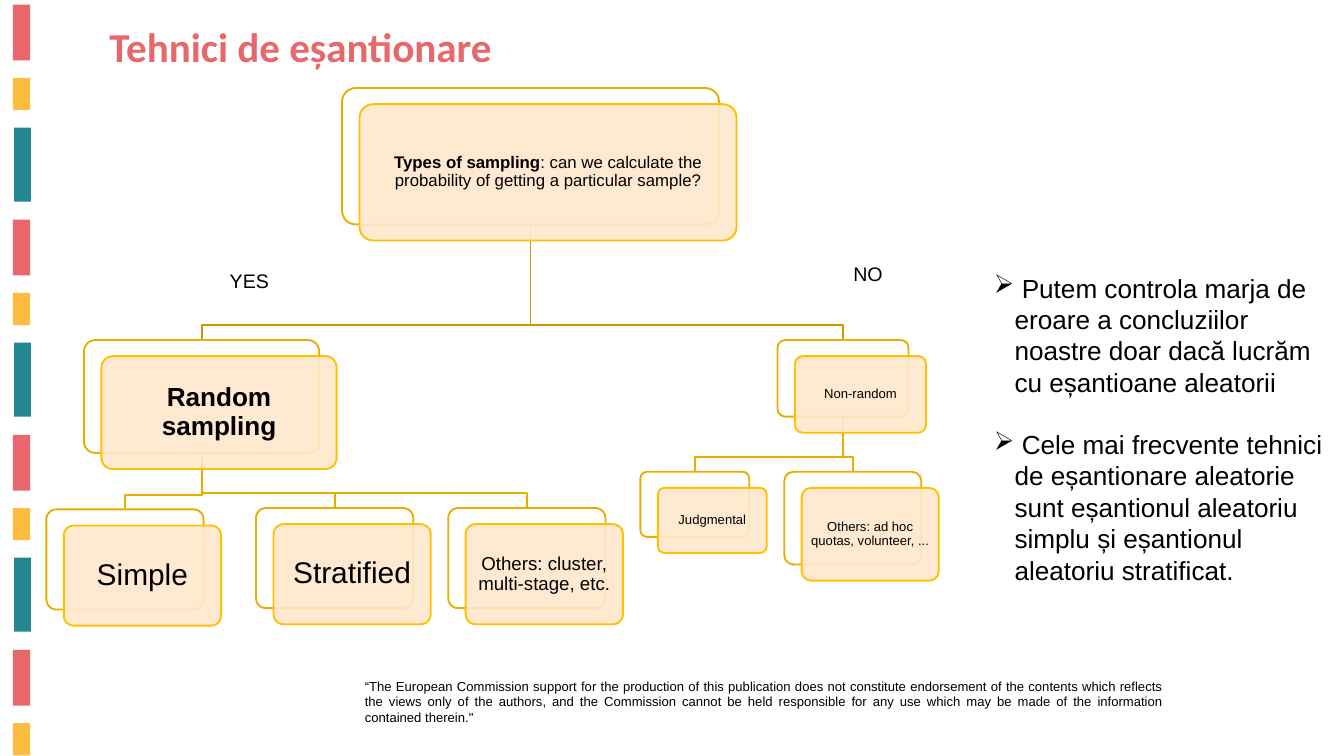
"""Build a slide with a decision tree of sampling techniques."""
import lxml.etree
import pptx
import pptx.dml.color
import pptx.enum.shapes
import pptx.enum.text
import pptx.oxml.ns
import pptx.util

Inches = pptx.util.Inches
Pt = pptx.util.Pt
ALIGN = pptx.enum.text.PP_ALIGN
ANCHOR = pptx.enum.text.MSO_ANCHOR
SHAPE = pptx.enum.shapes.MSO_SHAPE

COLORS = {
    "coral": "E8676A",
    "yellow": "FDBD40",
    "teal": "238791",
    "title": "E7686A",
    "text": "000000",
    "back_fill": "FFFFFF",
    "back_line": "E7AE00",
    "front_fill": "FFE8CC",
    "front_line": "FFC000",
    "trunk": "CC9A00",
}

STRIPE_PERIOD = 3.2
STRIPES = [
    ("coral", 0.19, 0.07, 0.26, 0.83),
    ("yellow", 0.19, 1.16, 0.26, 0.48),
    ("teal", 0.21, 1.9, 0.25, 1.1),
]

CARD_OFFSET = (0.26, 0.24)
ELBOW_GAP = 0.22
NODES = {
    "types": ((5.09, 1.31, 5.61, 2.03), 18, 0.13, [
        ("Types of sampling", True),
        (": can we calculate the probability of getting a particular sample?", False)]),
    "random": ((1.25, 5.06, 3.5, 1.68), 28, 0.17, [("Random sampling", True)]),
    "simple": ((0.69, 7.58, 2.34, 1.49), 32, 0.18, [("Simple", False)]),
    "stratified": ((3.81, 7.56, 2.34, 1.49), 32, 0.18, [("Stratified", False)]),
    "other random": ((6.67, 7.56, 2.34, 1.49), 20, 0.13,
                     [("Others: cluster, multi-stage, etc.", False)]),
    "non-random": ((11.57, 5.06, 1.95, 1.14), 14, 0.1, [("Non-random", False)]),
    "judgmental": ((9.53, 7.02, 1.62, 0.97), 14, 0.1, [("Judgmental", False)]),
    "other non-random": ((11.67, 7.02, 2.04, 1.38), 14, 0.1,
                         [("Others: ad hoc quotas, volunteer, ...", False)]),
}
BRANCHES = [
    ("non-random", "back_line", ["other non-random", "judgmental"]),
    ("random", "back_line", ["other random", "stratified", "simple"]),
    ("types", "trunk", ["non-random", "random"]),
]

FOOTER = (
    "“The European Commission support for the production of this publication does not "
    "constitute endorsement of the contents which reflects the views only of the authors, "
    "and the Commission cannot be held responsible for any use which may be made of the "
    "information contained therein.\""
)
CONCLUSIONS = [
    " Putem controla marja de eroare a concluziilor noastre doar dacă lucrăm "
    "cu eșantioane aleatorii",
    " Cele mai frecvente tehnici de eșantionare aleatorie sunt eșantionul aleatoriu "
    "simplu și eșantionul aleatoriu stratificat.",
]


def rgb(name):
    """Return the named colour."""
    return pptx.dml.color.RGBColor.from_string(COLORS[name])


def apply_format(target, values):
    """Set each attribute of the target from a dict."""
    for name, value in values.items():
        setattr(target, name, value)


def add_run(paragraph, text, size, font="Arial", bold=False, color="text"):
    """Append a formatted run to a paragraph."""
    run = paragraph.add_run()
    run.text = text
    apply_format(run.font, {"size": Pt(size), "name": font, "bold": bold})
    run.font.color.rgb = rgb(color)


def add_box(slide, bounds, shape_type, fill, line=None):
    """Add a filled preset shape without a shadow."""
    shape = slide.shapes.add_shape(shape_type, *map(Inches, bounds))
    shape.shadow.inherit = False
    shape.fill.solid()
    shape.fill.fore_color.rgb = rgb(fill)
    if line:
        shape.line.color.rgb = rgb(line)
        shape.line.width = Pt(2)
        shape.adjustments[0] = 0.1
    else:
        shape.line.fill.background()
    return shape


def add_stripes(slide):
    """Repeat the coloured stripes down the left edge."""
    for cycle in range(4):
        for color, left, top, width, height in STRIPES:
            stripe_top = top + cycle * STRIPE_PERIOD
            if stripe_top < 11.25:
                add_box(slide, (left, stripe_top, width, height), SHAPE.RECTANGLE, color)


def add_branch(slide, parent, child, color):
    """Draw an elbow line from the parent's bottom to the child's top."""
    left, top, width, height = NODES[parent][0]
    child_left, child_top, child_width, _ = NODES[child][0]
    start = (left + width / 2, top + height)
    end_x = child_left + child_width / 2
    elbow = child_top - ELBOW_GAP
    points = [(start[0], elbow), (end_x, elbow), (end_x, child_top)]
    builder = slide.shapes.build_freeform(*map(Inches, start))
    builder.add_line_segments([tuple(map(Inches, point)) for point in points], close=False)
    branch = builder.convert_to_shape()
    branch.shadow.inherit = False
    branch.fill.background()
    branch.line.color.rgb = rgb(color)
    branch.line.width = Pt(2)


def add_card(slide, bounds, size, margin, runs):
    """Add a back card and a translucent front card with text."""
    add_box(slide, bounds, SHAPE.ROUNDED_RECTANGLE, "back_fill", "back_line")
    left, top, width, height = bounds
    front_bounds = (left + CARD_OFFSET[0], top + CARD_OFFSET[1], width, height)
    front = add_box(slide, front_bounds, SHAPE.ROUNDED_RECTANGLE, "front_fill", "front_line")
    fill_color = front.fill._xPr.find(".//" + pptx.oxml.ns.qn("a:srgbClr"))
    lxml.etree.SubElement(fill_color, pptx.oxml.ns.qn("a:alpha"), val="90000")
    sides = ("margin_left", "margin_top", "margin_right", "margin_bottom")
    frame = front.text_frame
    apply_format(frame, {"word_wrap": True, "vertical_anchor": ANCHOR.MIDDLE})
    apply_format(frame, dict.fromkeys(sides, Inches(margin)))
    paragraph = frame.paragraphs[0]
    apply_format(paragraph, {"alignment": ALIGN.CENTER, "line_spacing": 0.9})
    for text, bold in runs:
        add_run(paragraph, text, size, bold=bold)


def add_text(slide, bounds, text, size, alignment=ALIGN.LEFT, **run_format):
    """Add a wrapping text box with one paragraph and return its frame."""
    frame = slide.shapes.add_textbox(*map(Inches, bounds)).text_frame
    frame.word_wrap = True
    frame.paragraphs[0].alignment = alignment
    add_run(frame.paragraphs[0], text, size, **run_format)
    return frame


def add_bullet(paragraph):
    """Give a paragraph an arrow bullet with a hanging indent."""
    properties = paragraph._p.get_or_add_pPr()
    apply_indent = {"marL": Inches(0.31), "indent": -Inches(0.31)}
    for name, value in apply_indent.items():
        properties.set(name, str(value))
    bullet = lxml.etree.SubElement(properties, pptx.oxml.ns.qn("a:buChar"))
    bullet.set("char", "➢")


def add_conclusions(slide):
    """Add the bulleted conclusions beside the tree."""
    frame = add_text(slide, (14.69, 4, 5.1, 6.24), CONCLUSIONS[0], 28)
    for text in CONCLUSIONS[1:]:
        paragraph = frame.add_paragraph()
        paragraph.space_before = Pt(33)
        add_run(paragraph, text, 28)
    for paragraph in frame.paragraphs:
        add_bullet(paragraph)


def main():
    """Build and save the presentation."""
    presentation = pptx.Presentation()
    apply_format(presentation, {"slide_width": Inches(20), "slide_height": Inches(11.25)})
    slide = presentation.slides.add_slide(presentation.slide_layouts[6])
    add_stripes(slide)
    add_text(slide, (5.33, 10.04, 12.08, 0.81), FOOTER, 14, ALIGN.JUSTIFY)
    for parent, color, children in BRANCHES:
        for child in children:
            add_branch(slide, parent, child, color)
    for node in NODES.values():
        add_card(slide, *node)
    add_text(slide, (3.32, 3.95, 1.18, 0.45), "YES", 21)
    add_text(slide, (12.6, 3.85, 1.06, 0.45), "NO", 21)
    add_conclusions(slide)
    add_text(slide, (1.53, 0.27, 6.77, 0.84), "Tehnici de eșantionare", 44,
             font="Calibri", bold=True, color="title")
    presentation.save("out.pptx")


if __name__ == "__main__":
    main()
